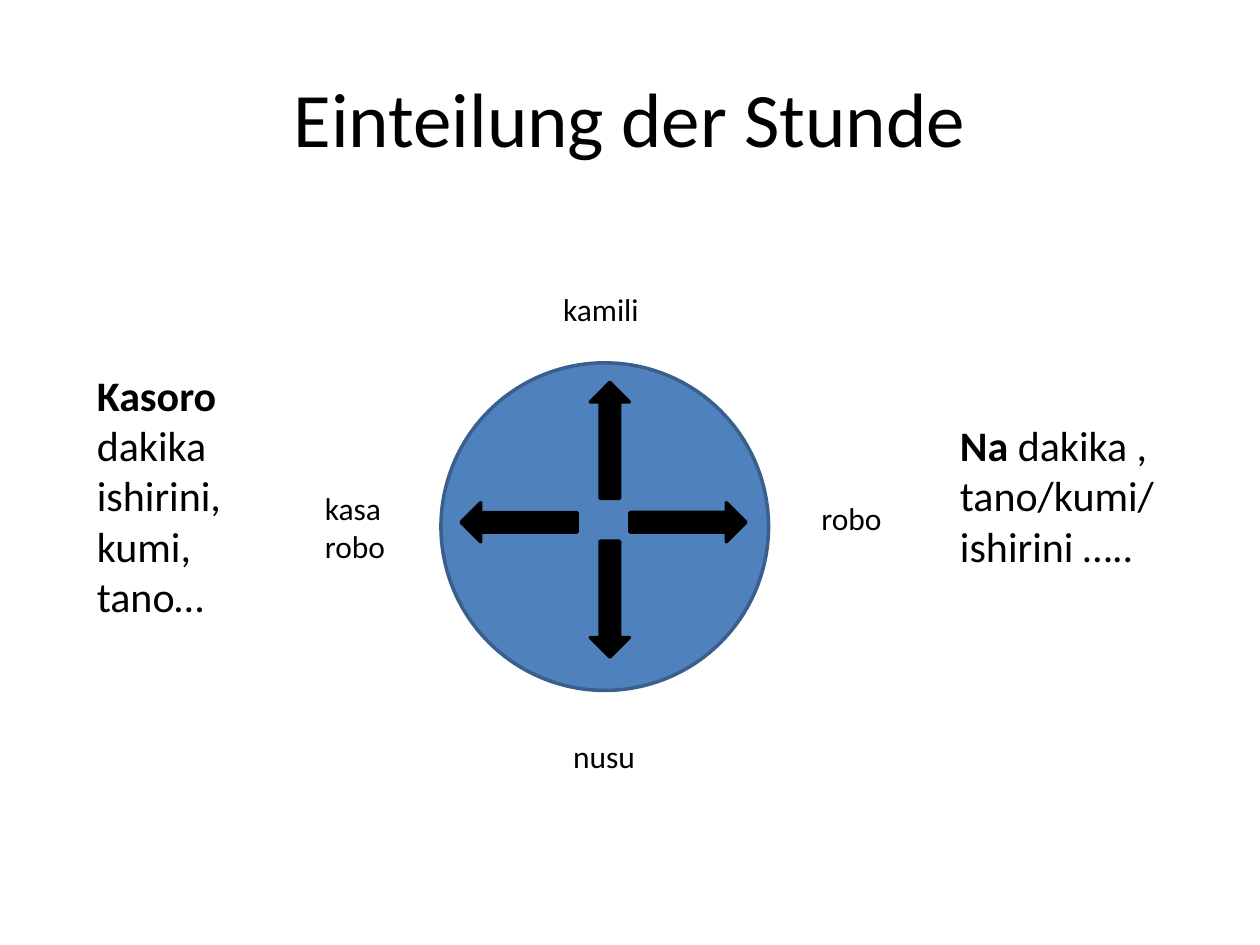
"""Build a slide that shows the Swahili names for the parts of the hour."""
from dataclasses import dataclass

from pptx import Presentation
from pptx.dml.color import RGBColor
from pptx.enum.shapes import MSO_SHAPE
from pptx.enum.text import MSO_ANCHOR, PP_ALIGN
from pptx.util import Inches, Pt

OVAL, ARROW = MSO_SHAPE.OVAL, MSO_SHAPE.RIGHT_ARROW
MIDDLE, CENTER = MSO_ANCHOR.MIDDLE, PP_ALIGN.CENTER
COLS, ROWS = 100, 75
CELL = Inches(0.1)
ARROW_LENGTH, ARROW_WIDTH = 9.2, 3.1


@dataclass(frozen=True)
class Theme:
    """Colours and type sizes of the slide."""
    font: str = "Calibri"
    ink: RGBColor = RGBColor(0x00, 0x00, 0x00)
    face: RGBColor = RGBColor(0x4F, 0x81, 0xBD)
    rim: RGBColor = RGBColor(0x3A, 0x5F, 0x8C)
    title: int = 44
    phrase: int = 24
    label: int = 18
    line: int = 2


THEME = Theme()


def grid(*cells):
    """Turn grid columns and rows into slide lengths."""
    return [round(n * CELL) for n in cells]


def style_run(r, size, bold=False):
    """Format one run in the theme font."""
    r.font.name = THEME.font
    r.font.size = Pt(size)
    r.font.bold = bold
    r.font.color.rgb = THEME.ink


def add_title(s, text, box):
    """Place and format the title placeholder."""
    sp = s.shapes.title
    sp.left, sp.top, sp.width, sp.height = grid(*box)
    tf = sp.text_frame
    tf.text = text
    tf.vertical_anchor = MIDDLE
    p = tf.paragraphs[0]
    p.alignment = CENTER
    style_run(p.runs[0], THEME.title)


def add_text(s, text, box, size, lead=""):
    """Add a wrapping text box with an optional bold lead."""
    tf = s.shapes.add_textbox(*grid(*box)).text_frame
    tf.word_wrap = True
    p = tf.paragraphs[0]
    for part, bold in ((lead, True), (text, False)):
        if part:
            r = p.add_run()
            r.text = part
            style_run(r, size, bold)


def add_solid(s, kind, box, fill, line, rotation=0):
    """Add a filled and outlined preset shape."""
    sp = s.shapes.add_shape(kind, *grid(*box))
    sp.rotation = rotation
    sp.shadow.inherit = False
    sp.fill.solid()
    sp.fill.fore_color.rgb = fill
    sp.line.color.rgb = line
    sp.line.width = Pt(THEME.line)


def add_hand(s, x, y, rotation):
    """Add a clock arrow centred on a grid point."""
    box = (x - ARROW_LENGTH / 2, y - ARROW_WIDTH / 2, ARROW_LENGTH, ARROW_WIDTH)
    add_solid(s, ARROW, box, THEME.ink, THEME.ink, rotation)


def main():
    """Build and save the slide."""
    prs = Presentation()
    prs.slide_width, prs.slide_height = grid(COLS, ROWS)
    s = prs.slides.add_slide(prs.slide_layouts[5])

    add_title(s, "Einteilung der Stunde", (5, 3, 90, 12.5))
    add_solid(s, OVAL, (35, 28.8, 26, 26), THEME.face, THEME.rim)

    for text, box in (
        ("kamili", (43.7, 22.5, 10.2, 4.7)),
        ("robo", (64.2, 39.1, 14.2, 4)),
        ("nusu", (44.5, 58, 7.9, 4)),
        ("kasa robo", (24.8, 38.3, 8.7, 7.1)),
    ):
        add_text(s, text, box, THEME.label)

    for x, y, rotation in (
        (48.4, 47.55, 90),
        (48.4, 34.95, 270),
        (41.2, 41.45, 180),
        (54.6, 41.45, 0),
    ):
        add_hand(s, x, y, rotation)

    for lead, text, box in (
        ("Na ", "dakika , tano/kumi/ishirini …..", (75.2, 32.8, 18.1, 13.1)),
        ("Kasoro ", "dakika ishirini, kumi, tano…", (6.7, 28.8, 14.2, 21.2)),
    ):
        add_text(s, text, box, THEME.phrase, lead)

    prs.save("out.pptx")


if __name__ == "__main__":
    main()
